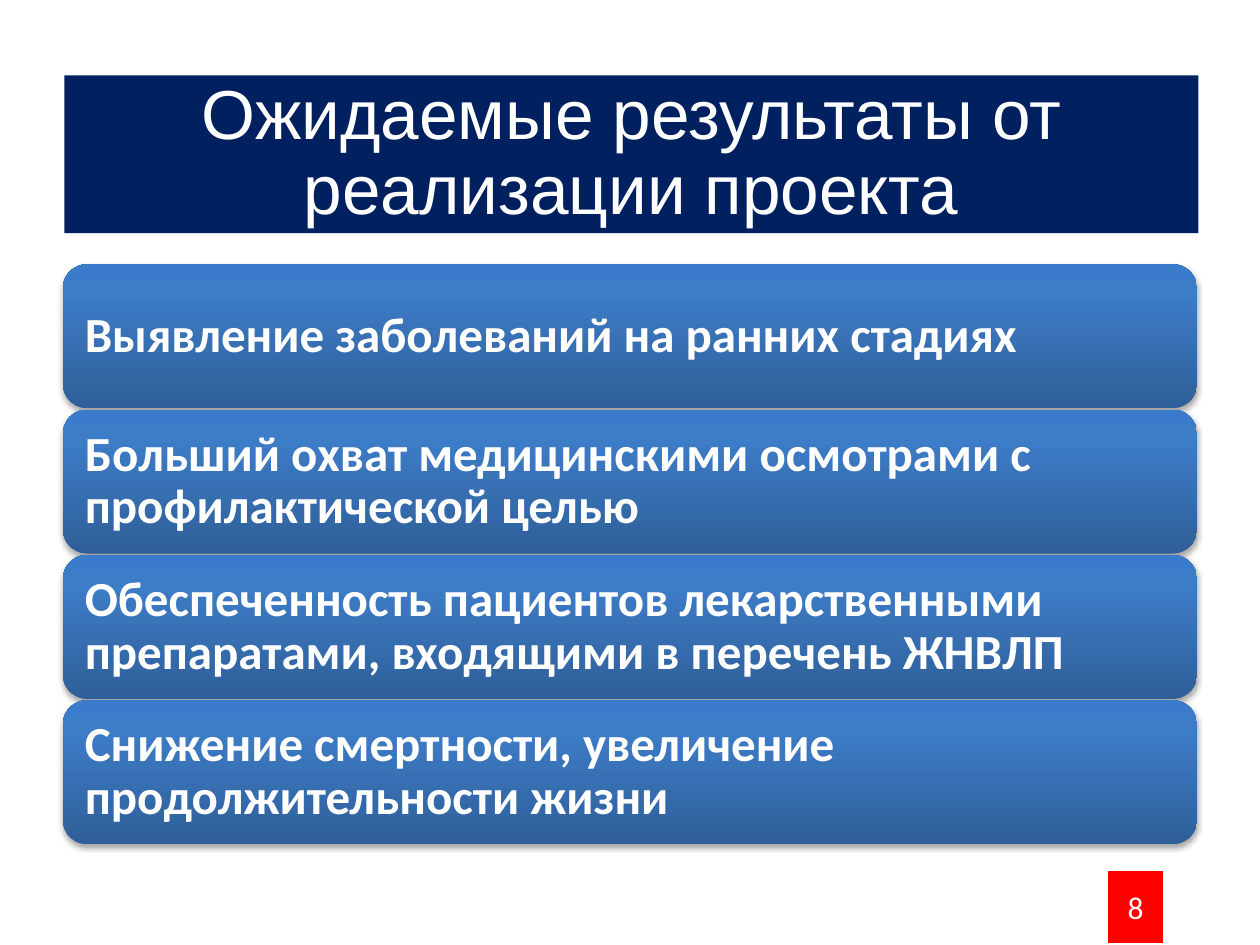
from pptx import Presentation
from pptx.dml.color import RGBColor
from pptx.enum import shapes, text
from pptx.oxml import parse_xml
from pptx.oxml.ns import nsdecls
from pptx.util import Cm, Pt

TITLE = "Ожидаемые результаты от реализации проекта"
RESULTS = [
    "Выявление заболеваний на ранних стадиях",
    "Больший охват медицинскими осмотрами с профилактической целью",
    "Обеспеченность пациентов лекарственными препаратами, входящими в перечень ЖНВЛП",
    "Снижение смертности, увеличение продолжительности жизни",
]
PAGE_NUMBER = "8"

COLORS = {"navy": "002060", "red": "FF0000", "white": "FFFFFF", "shadow": "000000"}
BAR_GRADIENT = [(0, "2F5F99"), (80, "3D7CC7"), (100, "3A7CCB")]

BAR_LEFT, BAR_TOP, BAR_WIDTH, BAR_HEIGHT = 1.27, 5.33, 22.86, 2.9
BAR_STEP = 2.93


def color(name):
    return RGBColor.from_string(COLORS[name])


def add_box(slide, kind, box, words, size, font):
    """Add a borderless shape with one paragraph of white text."""
    s = slide.shapes.add_shape(kind, *(Cm(v) for v in box))
    s.shadow.inherit = False
    s.line.fill.background()
    tf = s.text_frame
    tf.word_wrap = True
    tf.vertical_anchor = text.MSO_ANCHOR.MIDDLE
    p = tf.paragraphs[0]
    p.text = words
    p.alignment = text.PP_ALIGN.CENTER
    p.font.size = Pt(size)
    p.font.name = font
    p.font.color.rgb = color("white")
    return s


def fill_solid(s, name):
    s.fill.solid()
    s.fill.fore_color.rgb = color(name)


def fill_gradient(s):
    """Fill from the bottom up; three stops need XML."""
    s.fill.gradient()
    s.fill.gradient_angle = 90
    stops = s._element.spPr.find(".//{*}gsLst")
    for stop in list(stops):
        stops.remove(stop)
    for pos, rgb in BAR_GRADIENT:
        stops.append(parse_xml(
            f'<a:gs {nsdecls("a")} pos="{pos * 1000}"><a:srgbClr val="{rgb}"/></a:gs>'))


def add_shadow(s):
    effects = s._element.spPr.find("{*}effectLst")
    effects.append(parse_xml(
        f'<a:outerShdw {nsdecls("a")} blurRad="{Pt(3.1)}" dist="{Pt(1.8)}" '
        f'dir="5400000" rotWithShape="0"><a:srgbClr val="{COLORS["shadow"]}">'
        '<a:alpha val="35000"/></a:srgbClr></a:outerShdw>'))


def add_title(slide):
    s = add_box(slide, shapes.MSO_SHAPE.RECTANGLE, (1.3, 1.52, 22.86, 3.18),
                TITLE, 39.6, "Arial")
    fill_solid(s, "navy")
    tf = s.text_frame
    tf.margin_top = tf.margin_bottom = 0
    tf.paragraphs[0].line_spacing = 0.9


def add_result(slide, index, words):
    box = (BAR_LEFT, BAR_TOP + index * BAR_STEP, BAR_WIDTH, BAR_HEIGHT)
    s = add_box(slide, shapes.MSO_SHAPE.ROUNDED_RECTANGLE, box, words, 28, "Calibri")
    fill_gradient(s)
    add_shadow(s)
    tf = s.text_frame
    tf.margin_left = tf.margin_right = tf.margin_top = tf.margin_bottom = Cm(0.3)
    p = tf.paragraphs[0]
    p.alignment = text.PP_ALIGN.LEFT
    p.line_spacing = 0.9
    p.font.bold = True


def add_page_number(slide):
    s = add_box(slide, shapes.MSO_SHAPE.RECTANGLE, (22.3, 17.53, 1.19, 1.52),
                PAGE_NUMBER, 18, "Calibri")
    fill_solid(s, "red")
    s.line.color.rgb = color("white")
    s.line.width = Pt(2)


def main():
    prs = Presentation()
    prs.slide_width, prs.slide_height = Cm(25.4), Cm(19.05)
    slide = prs.slides.add_slide(prs.slide_layouts[6])
    add_title(slide)
    for i, words in enumerate(RESULTS):
        add_result(slide, i, words)
    add_page_number(slide)
    prs.save("out.pptx")


if __name__ == "__main__":
    main()
